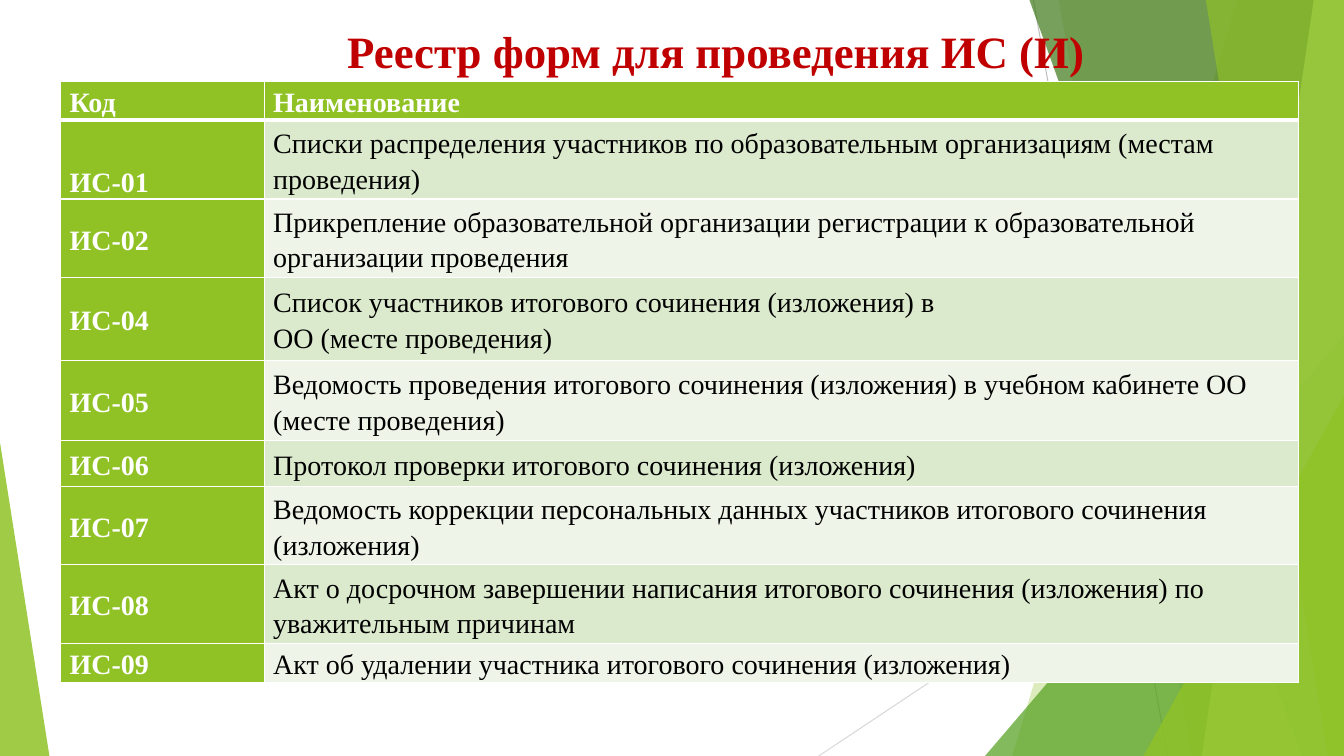
from lxml.etree import SubElement as Sub
from pptx import Presentation
from pptx.dml.color import RGBColor as RGB
from pptx.enum.shapes import MSO_CONNECTOR as Link, MSO_SHAPE as Shape
from pptx.enum.text import MSO_ANCHOR as Anchor, PP_ALIGN as Align
from pptx.oxml.ns import qn
from pptx.util import Inches as In, Pt

WIDE, HIGH = 13.33, 7.5
FONT = "Times New Roman"
WHITE, BLACK = RGB(255, 255, 255), RGB(0, 0, 0)
RED = RGB(0xC0, 0, 0)
GREEN = RGB(0x90, 0xC2, 0x26)
LEAF = RGB(0x54, 0xA0, 0x21)
DARK = RGB(0x3F, 0x78, 0x19)
LIME = RGB(0xC0, 0xE4, 0x74)
BANDS = RGB(0xDB, 0xE9, 0xCD), RGB(0xEE, 0xF4, 0xE8)

TITLE = "Реестр форм для проведения ИС (И)"
HEAD = ("Код", "Наименование")
FORMS = [
    ("ИС-01", "Списки распределения участников по образовательным организациям (местам проведения)"),
    ("ИС-02", "Прикрепление образовательной организации регистрации к образовательной организации проведения"),
    ("ИС-04", "Список участников итогового сочинения (изложения) в\nОО (месте проведения)"),
    ("ИС-05", "Ведомость проведения итогового сочинения (изложения) в учебном кабинете ОО (месте проведения)"),
    ("ИС-06", "Протокол проверки итогового сочинения (изложения)"),
    ("ИС-07", "Ведомость коррекции персональных данных участников итогового сочинения (изложения)"),
    ("ИС-08", "Акт о досрочном завершении написания итогового сочинения (изложения) по уважительным причинам"),
    ("ИС-09", "Акт об удалении участника итогового сочинения (изложения)"),
]
COLS = (2.02, 10.26)
ROWS = (0.36, 0.78, 0.78, 0.82, 0.8, 0.45, 0.78, 0.78, 0.39)

# start, end, colour
RAYS = [
    ((10.25, 0), (11.58, HIGH), RGB(0xBF, 0xBF, 0xBF)),
    ((WIDE, 4.03), (8.12, HIGH), RGB(0xD9, 0xD9, 0xD9)),
]
# wedge: x at top, x at foot; peak: left, top, width, apex share
FACETS = [
    ("wedge", (12.27, 10.04), GREEN, 30),
    ("wedge", (10.5, 11.82), GREEN, 20),
    ("peak", (9.77, 3.33, 3.56, 1), LEAF, 72),
    ("wedge", (10.21, 12.91), DARK, 70),
    ("wedge", (13.03, 11.92), LIME, 70),
    ("wedge", (11.96, 13.17), GREEN, 65),
    ("peak", (11.34, 3.93, 1.99, 1), GREEN, 80),
    ("peak", (0, 4.39, 0.49, 0), GREEN, 85),
]

deck = Presentation()
deck.slide_width, deck.slide_height = In(WIDE), In(HIGH)
slide = deck.slides.add_slide(deck.slide_layouts[6])
shapes = slide.shapes


def wedge(top, foot):
    """Full-height shape between a slanted edge and the right slide edge."""
    pen = shapes.build_freeform(In(top), 0)
    ends = [(WIDE, 0), (WIDE, HIGH), (foot, HIGH)]
    pen.add_line_segments([(In(x), In(y)) for x, y in ends])
    return pen.convert_to_shape()


def peak(left, top, width, apex):
    """Right-angled triangle standing on the slide's lower edge."""
    tri = shapes.add_shape(Shape.ISOSCELES_TRIANGLE, In(left), In(top),
                           In(width), In(HIGH - top))
    tri.adjustments[0] = apex
    return tri


def write(par, text, size, color, bold):
    run = par.add_run()
    run.text = text
    font = run.font
    font.name, font.size, font.bold = FONT, Pt(size), bold
    font.color.rgb = color


def edge(cell, side, width):
    line = Sub(cell._tc.get_or_add_tcPr(), qn("a:ln" + side), w=str(Pt(width)))
    Sub(Sub(line, qn("a:solidFill")), qn("a:srgbClr"), val=str(WHITE))


def fill_cell(cell, text, row, col):
    key = row == 0 or col == 0
    for side in "LRTB":
        heavy = (row, side) in ((0, "B"), (1, "T"))
        edge(cell, side, 3 if heavy else 1)
    cell.fill.solid()
    cell.fill.fore_color.rgb = GREEN if key else BANDS[(row - 1) % 2]
    cell.margin_left = cell.margin_right = In(0.09)
    cell.margin_top = cell.margin_bottom = 0
    low = (row, col) == (1, 0)
    cell.vertical_anchor = Anchor.BOTTOM if low else Anchor.MIDDLE
    frame = cell.text_frame
    for i, part in enumerate(text.split("\n")):
        par = frame.add_paragraph() if i else frame.paragraphs[0]
        par.line_spacing = 1.15
        write(par, part, 20, WHITE if key else BLACK, key)


for start, end, color in RAYS:
    ray = shapes.add_connector(Link.STRAIGHT, *map(In, start + end))
    ray.line.color.rgb = color
    ray.line.width = Pt(0.75)
    Sub(ray._element.spPr, qn("a:effectLst"))

for kind, place, color, alpha in FACETS:
    facet = wedge(*place) if kind == "wedge" else peak(*place)
    facet.shadow.inherit = False
    facet.line.fill.background()
    facet.fill.solid()
    facet.fill.fore_color.rgb = color
    tint = facet._element.spPr.find(".//" + qn("a:srgbClr"))
    Sub(tint, qn("a:alpha"), val=str(alpha * 1000))

box = shapes.add_textbox(In(0.64), In(0.17), In(12.92), In(0.67))
frame = box.text_frame
frame.word_wrap = True
frame.vertical_anchor = Anchor.MIDDLE
frame.paragraphs[0].alignment = Align.CENTER
write(frame.paragraphs[0], TITLE, 32, RED, True)

table = shapes.add_table(len(ROWS), len(COLS), In(0.6), In(0.81),
                         In(sum(COLS)), In(sum(ROWS))).table
for col, width in zip(table.columns, COLS):
    col.width = In(width)
for row, height in zip(table.rows, ROWS):
    row.height = In(height)
for r, texts in enumerate([HEAD] + FORMS):
    for c, text in enumerate(texts):
        fill_cell(table.cell(r, c), text, r, c)

deck.save("out.pptx")
